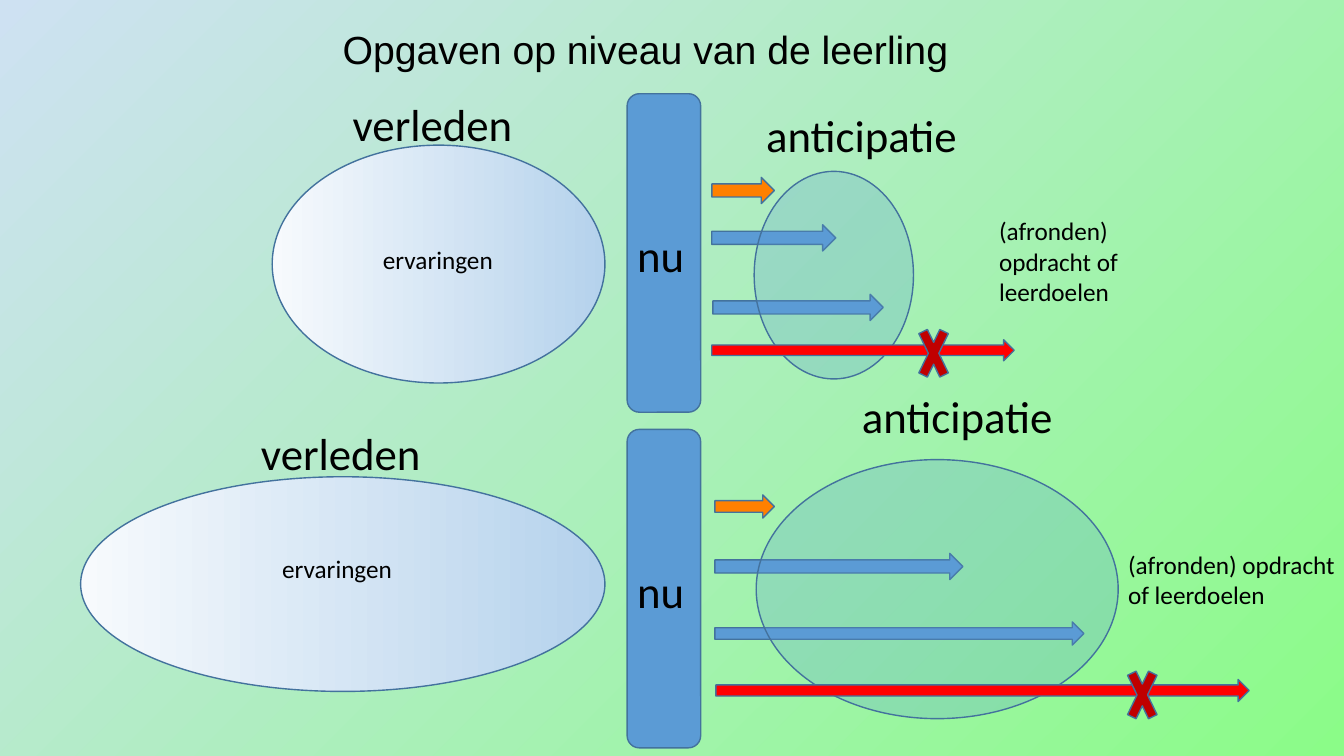
"""Build a slide on tasks that match the level of the learner."""
from lxml.etree import SubElement
from pptx import Presentation
from pptx.dml.color import RGBColor
from pptx.enum.shapes import MSO_SHAPE
from pptx.enum.text import PP_ALIGN
from pptx.oxml.ns import qn
from pptx.util import Inches, Pt

BLACK = RGBColor(0x00, 0x00, 0x00)
BLUE = RGBColor(0x5B, 0x9B, 0xD5)
EDGE = RGBColor(0x43, 0x72, 0x9D)
ORANGE = RGBColor(0xFF, 0x80, 0x00)
RED = RGBColor(0xFF, 0x00, 0x00)
CRIMSON = RGBColor(0xC0, 0x00, 0x00)
PALE = RGBColor(0xF7, 0xFA, 0xFD)
SKY = RGBColor(0xB5, 0xD2, 0xEC)
MIST = RGBColor(0xCE, 0xE1, 0xF2)
GREEN = RGBColor(0x8B, 0xFC, 0x88)


def blend(fill, first, last, angle):
    fill.gradient()
    fill.gradient_angle = angle
    for stop, color in zip(fill.gradient_stops, (first, last)):
        stop.color.rgb = color


def write(frame, text, size=32, font="Calibri", color=BLACK,
          align=PP_ALIGN.LEFT, wrap=False):
    frame.word_wrap = wrap
    para = frame.paragraphs[0]
    para.alignment = align
    run = para.add_run()
    run.text = text
    run.font.size = Pt(size)
    run.font.name = font
    run.font.color.rgb = color


class Board:
    def __init__(self, slide, edge=EDGE, width=1):
        self.slide = slide
        self.edge = edge
        self.width = width

    def shape(self, kind, box, color=None):
        item = self.slide.shapes.add_shape(kind, *map(Inches, box))
        item.shadow.inherit = False
        item.line.color.rgb = self.edge
        item.line.width = Pt(self.width)
        if color is not None:
            item.fill.solid()
            item.fill.fore_color.rgb = color
        return item

    def label(self, text, box, **style):
        item = self.slide.shapes.add_textbox(*map(Inches, box))
        write(item.text_frame, text, **style)

    def bar(self, top):
        self.shape(MSO_SHAPE.ROUNDED_RECTANGLE, (6.22, top, 0.73, 3.16), BLUE)
        self.label("nu", (6.22, top + 1.28, 0.67, 0.63))

    def past(self, box, title, note):
        oval = self.shape(MSO_SHAPE.OVAL, box)
        blend(oval.fill, PALE, SKY, 0)
        self.label("verleden", (*title, 2.13, 0.63))
        self.label("ervaringen", (*note, 1.3, 0.4), size=18)

    def future(self, box, title, note):
        oval = self.shape(MSO_SHAPE.OVAL, box, BLUE)
        tint = oval.fill._xPr.find(qn("a:solidFill"))[0]
        SubElement(tint, qn("a:alpha"), val="25000")
        self.label("anticipatie", (*title, 2.21, 0.63))
        self.label("(afronden) opdracht of leerdoelen", note,
                   size=18, wrap=True)

    def arrow(self, box, color):
        self.shape(MSO_SHAPE.RIGHT_ARROW, box, color)

    def cross(self, left, top):
        self.shape(MSO_SHAPE.MATH_MULTIPLY, (left, top, 0.4, 0.83), CRIMSON)


ROWS = [
    dict(bar=0.93,
         past=((2.7, 1.44, 3.3, 2.36), (3.4, 0.91), (3.7, 2.37)),
         steps=[((7.06, 1.76, 0.62, 0.26), ORANGE),
                ((7.06, 2.23, 1.23, 0.26), BLUE),
                ((7.07, 2.92, 1.69, 0.26), BLUE)],
         future=((7.48, 1.7, 1.58, 2.06), (7.5, 1.02),
                 (9.81, 2.09, 1.61, 1)),
         far=(7.06, 3.37, 3, 0.21), cross=(9.06, 3.09)),
    dict(bar=4.26,
         past=((0.8, 4.73, 5.2, 2.13), (2.49, 4.17), (2.7, 5.44)),
         steps=[((7.09, 4.91, 0.59, 0.23), ORANGE),
                ((7.09, 5.49, 2.46, 0.26), BLUE),
                ((7.09, 6.17, 3.66, 0.23), BLUE)],
         future=((7.5, 4.56, 3.59, 2.57), (8.45, 3.81),
                 (11.09, 5.4, 2.38, 0.7)),
         far=(7.1, 6.74, 5.29, 0.22), cross=(11.13, 6.48)),
]


def main():
    deck = Presentation()
    deck.slide_width = Inches(13.33)
    deck.slide_height = Inches(7.5)
    slide = deck.slides.add_slide(deck.slide_layouts[6])
    blend(slide.background.fill, MIST, GREEN, 315)
    board = Board(slide)
    for row in ROWS:
        board.bar(row["bar"])
        board.past(*row["past"])
        for box, color in row["steps"]:
            board.arrow(box, color)
        board.future(*row["future"])
        board.arrow(row["far"], RED)
        board.cross(*row["cross"])
    board.label("Opgaven op niveau van de leerling", (1.97, 0.2, 8.86, 0.53),
                size=28, font="Arial", align=PP_ALIGN.CENTER, wrap=True)
    deck.save("out.pptx")


if __name__ == "__main__":
    main()
